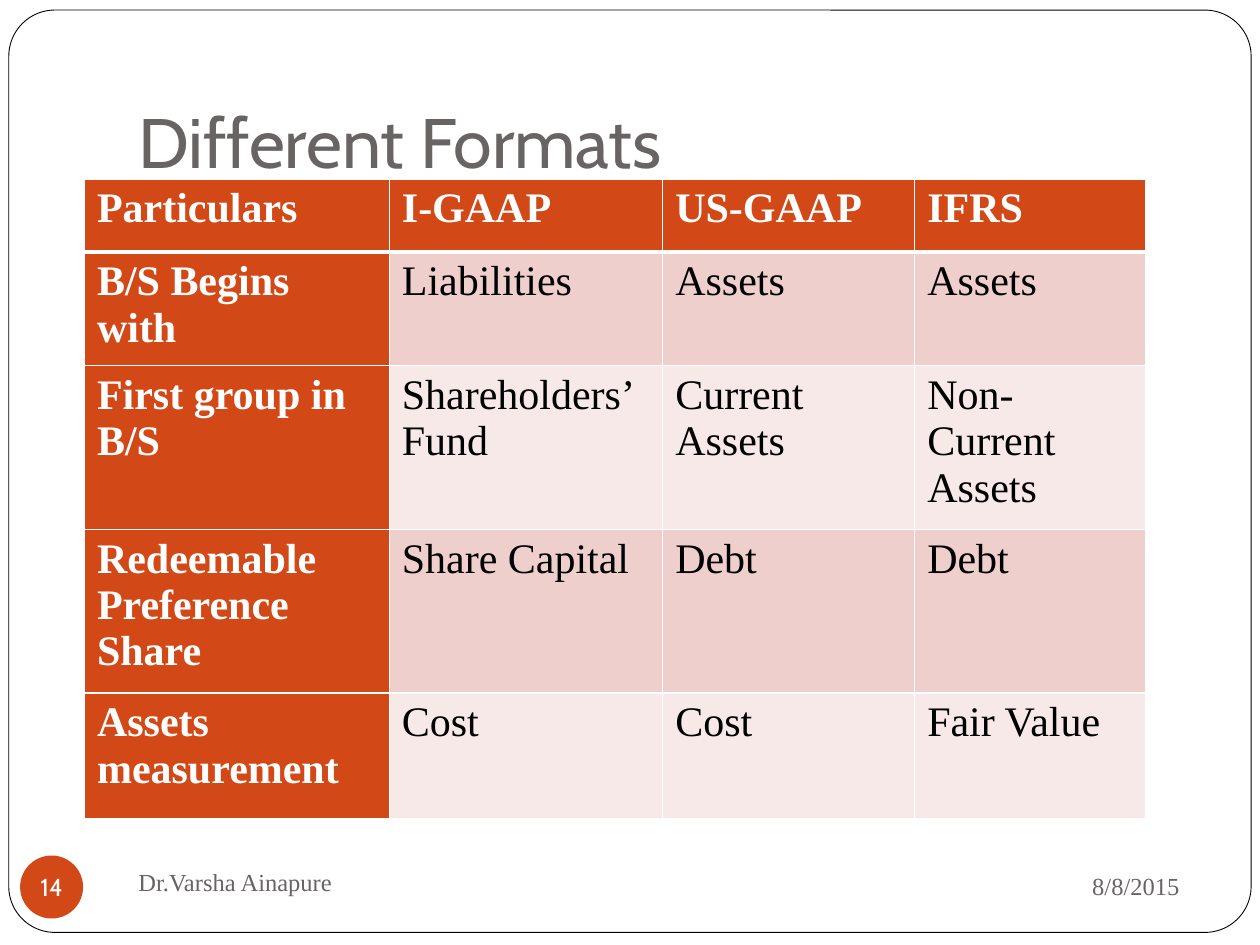
from dataclasses import dataclass

from lxml import etree
from pptx import Presentation
from pptx.dml.color import RGBColor
from pptx.enum import shapes, text
from pptx.oxml import ns
from pptx.util import Inches, Pt


@dataclass(frozen=True)
class Theme:
    accent: str = "D34817"
    grey: str = "696464"
    white: str = "FFFFFF"
    black: str = "000000"
    bands: tuple = ("EFCFCC", "F7E9E8")
    heading_font: str = "Cabin"
    body_font: str = "Times New Roman"
    title_size: int = 40
    table_size: int = 24
    footer_size: int = 14


theme = Theme()


def write(frame, words, font, size, color, bold=False, align=None):
    frame.text = words
    for para in frame.paragraphs:
        para.alignment = align
        para.font.name = font
        para.font.size = Pt(size)
        para.font.bold = bold
        para.font.color.rgb = RGBColor.from_string(color)


def set_border(cell, side, width):
    line = etree.SubElement(cell._tc.get_or_add_tcPr(), ns.qn(f"a:{side}"), w=str(Pt(width)))
    fill = etree.SubElement(line, ns.qn("a:solidFill"))
    etree.SubElement(fill, ns.qn("a:srgbClr"), val=theme.white)


deck = Presentation()
deck.slide_width, deck.slide_height = Inches(10), Inches(7.5)
page = deck.slides.add_slide(deck.slide_layouts[6])

# Rounded page frame
frame = page.shapes.add_shape(shapes.MSO_SHAPE.ROUNDED_RECTANGLE,
                              Inches(0.07), Inches(0.08), Inches(9.86), Inches(7.32))
frame.adjustments[0] = 0.05
frame.shadow.inherit = False
frame.fill.solid()
frame.fill.fore_color.rgb = RGBColor.from_string(theme.white)
frame.line.color.rgb = RGBColor.from_string(theme.black)
frame.line.width = Pt(0.5)

# Title, date and author
bottom, middle = text.MSO_ANCHOR.BOTTOM, text.MSO_ANCHOR.MIDDLE
labels = [
    ("Different Formats", (1, 0.3, 8.5, 1.25), bottom, 0.1,
     theme.heading_font, theme.title_size, None),
    ("8/8/2015", (6.75, 6.77, 2.71, 0.52), middle, 0.05,
     theme.body_font, theme.footer_size, text.PP_ALIGN.RIGHT),
    ("Dr.Varsha Ainapure", (1, 6.75, 4.33, 0.5), middle, 0.05,
     theme.body_font, theme.footer_size, None),
]
for words, place, anchor, margin_bottom, font, size, align in labels:
    box = page.shapes.add_textbox(*map(Inches, place))
    box.text_frame.word_wrap = True
    box.text_frame.vertical_anchor = anchor
    box.text_frame.margin_bottom = Inches(margin_bottom)
    write(box.text_frame, words, font, size, theme.grey, align=align)

# Page number badge
badge = page.shapes.add_shape(shapes.MSO_SHAPE.OVAL,
                              Inches(0.16), Inches(6.79), Inches(0.5), Inches(0.5))
badge.shadow.inherit = False
badge.fill.solid()
badge.fill.fore_color.rgb = RGBColor.from_string(theme.accent)
badge.line.fill.background()
number = badge.text_frame
number.word_wrap = False
number.vertical_anchor = middle
number.margin_left = number.margin_right = number.margin_top = number.margin_bottom = 0
write(number, "14", theme.heading_font, theme.footer_size, theme.white,
      align=text.PP_ALIGN.CENTER)

# Comparison table
rows = [
    ("Particulars", "I-GAAP", "US-GAAP", "IFRS"),
    ("B/S Begins with", "Liabilities", "Assets", "Assets"),
    ("First group in B/S", "Shareholders’\nFund", "Current Assets", "Non-Current Assets"),
    ("Redeemable Preference Share", "Share Capital", "Debt", "Debt"),
    ("Assets measurement", "Cost", "Cost", "Fair Value"),
]
widths = [2.42, 2.17, 2, 1.83]
heights = [0.58, 0.67, 0.92, 0.83, 1]
table = page.shapes.add_table(len(rows), len(widths), Inches(0.67), Inches(1.42),
                              Inches(sum(widths)), Inches(sum(heights))).table
for column, width in zip(table.columns, widths):
    column.width = Inches(width)
for row, height in zip(table.rows, heights):
    row.height = Inches(height)

for r, row in enumerate(rows):
    for c, words in enumerate(row):
        cell = table.cell(r, c)
        heading = r == 0 or c == 0
        # Borders come before the fill in the cell properties
        for side in ("lnL", "lnR", "lnT", "lnB"):
            under_header = (r, side) in ((0, "lnB"), (1, "lnT"))
            set_border(cell, side, 3 if under_header else 1)
        cell.fill.solid()
        cell.fill.fore_color.rgb = RGBColor.from_string(
            theme.accent if heading else theme.bands[(r - 1) % 2])
        write(cell.text_frame, words, theme.body_font, theme.table_size,
              theme.white if heading else theme.black, bold=heading)

deck.save("out.pptx")
